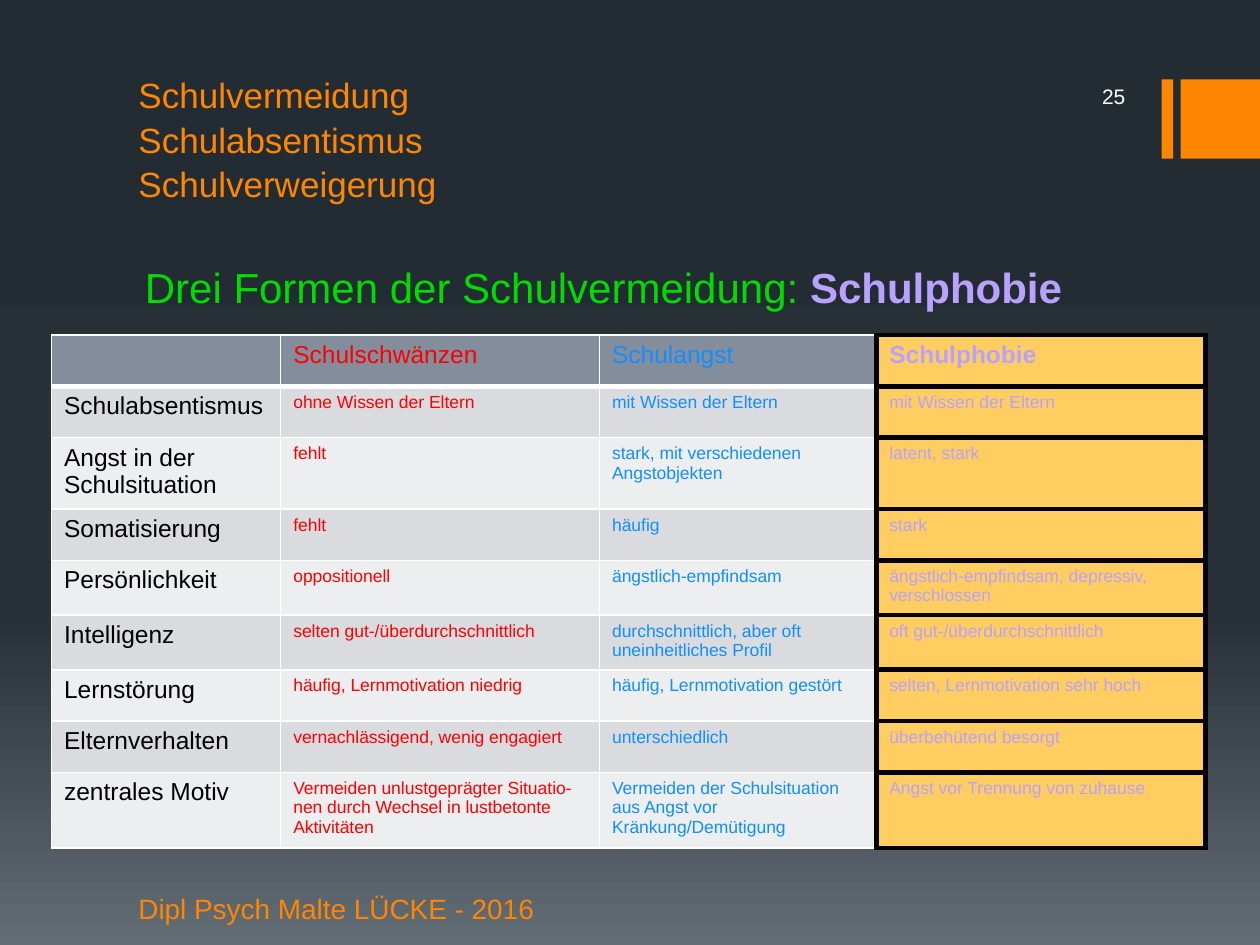
from copy import deepcopy

from lxml import etree
from pptx import Presentation
from pptx.dml.color import RGBColor
from pptx.enum.shapes import MSO_SHAPE
from pptx.enum.text import MSO_ANCHOR, PP_ALIGN
from pptx.oxml.ns import qn
from pptx.util import Pt

RECTANGLE = MSO_SHAPE.RECTANGLE
TOP, MIDDLE, BOTTOM = MSO_ANCHOR.TOP, MSO_ANCHOR.MIDDLE, MSO_ANCHOR.BOTTOM
LEFT, RIGHT = PP_ALIGN.LEFT, PP_ALIGN.RIGHT

FONT = "Arial"
COLORS = {
    "orange": "FF8600", "green": "00DC00", "violet": "B9A1FF",
    "red": "FF0000", "blue": "118EFF", "black": "000000", "white": "FFFFFF",
    "header": "838D9B", "band dark": "D9DBDE", "band light": "EDEEEF",
    "highlight": "FFCD60",
    "sky top": "242C33", "sky middle": "273037", "sky bottom": "636D76",
}
BACKGROUND = [(0, "sky top"), (0.65, "sky middle"), (1, "sky bottom")]
ACCENT_BARS = [(663.84, 6.48), (674.64, 45.36)]  # left, width
BAR_TOP, BAR_HEIGHT = 45.36, 45.36

# Each span is text, size, colour, bold.
TEXTS = [
    {"at": (72, 43.2, 353.52, 77.04), "anchor": BOTTOM,
     "paragraph": {"line_spacing": 1.05},
     "spans": [("Schulvermeidung\nSchulabsentismus\nSchulverweigerung",
                20, "orange", False)]},
    {"at": (72, 146.16, 592.56, 40), "frame": {"margin_left": Pt(10.8)},
     "paragraph": {"space_before": Pt(2.4)},
     "spans": [("Drei Formen der Schulvermeidung: ", 24, "green", False),
               ("Schulphobie", 24, "violet", True)]},
    {"at": (72, 509.76, 251.28, 23.76), "frame": {"margin_top": 0},
     "spans": [("Dipl Psych Malte LÜCKE - 2016", 16, "orange", False)]},
    {"at": (576, 43.2, 74.16, 23.76), "anchor": MIDDLE,
     "paragraph": {"alignment": RIGHT},
     "spans": [("25", 12, "white", False)]},
]

TABLE_LEFT, TABLE_TOP = 29.4, 191.5
COLUMN_WIDTHS = [131.04, 182.16, 158.4, 187.92]
ROW_HEIGHTS = [29.3, 29.3, 38.9, 29.3, 29.3, 29.3, 29.3, 29.3, 41]
COLUMN_COLORS = ["black", "red", "blue", "violet"]
ROWS = [
    ("", "Schulschwänzen", "Schulangst", "Schulphobie"),
    ("Schulabsentismus", "ohne Wissen der Eltern",
     "mit Wissen der Eltern", "mit Wissen der Eltern"),
    ("Angst in der Schulsituation", "fehlt",
     "stark, mit verschiedenen\nAngstobjekten", "latent, stark"),
    ("Somatisierung", "fehlt", "häufig", "stark"),
    ("Persönlichkeit", "oppositionell", "ängstlich-empfindsam",
     "ängstlich-empfindsam, depressiv, verschlossen"),
    ("Intelligenz", "selten gut-/überdurchschnittlich",
     "durchschnittlich, aber oft\nuneinheitliches Profil",
     "oft gut-/überdurchschnittlich"),
    ("Lernstörung", "häufig, Lernmotivation niedrig",
     "häufig, Lernmotivation gestört", "selten, Lernmotivation sehr hoch"),
    ("Elternverhalten", "vernachlässigend, wenig engagiert",
     "unterschiedlich", "überbehütend besorgt"),
    ("zentrales Motiv",
     "Vermeiden unlustgeprägter Situatio-nen durch Wechsel in lustbetonte Aktivitäten",
     "Vermeiden der Schulsituation aus Angst vor Kränkung/Demütigung",
     "Angst vor Trennung von zuhause"),
]


def rgb(name):
    return RGBColor.from_string(COLORS[name])


def set_all(target, values):
    for name, value in values.items():
        setattr(target, name, value)


def add_span(para, text, size, color, bold):
    for number, line in enumerate(text.split("\n")):
        if number:
            para.add_line_break()
        span = para.add_run()
        span.text = line
        set_all(span.font, {"name": FONT, "size": Pt(size), "bold": bold})
        span.font.color.rgb = rgb(color)


def paint_background(page):
    fill = page.background.fill
    fill.gradient()
    fill.gradient_angle = 270
    stop_list = page.element.find(".//" + qn("a:gsLst"))
    stop_list.append(deepcopy(stop_list[-1]))
    for stop, (position, color) in zip(fill.gradient_stops, BACKGROUND):
        stop.position = position
        stop.color.rgb = rgb(color)


def add_bar(page, left, width):
    bar = page.shapes.add_shape(
        RECTANGLE, Pt(left), Pt(BAR_TOP), Pt(width), Pt(BAR_HEIGHT))
    bar.shadow.inherit = False
    bar.fill.solid()
    bar.fill.fore_color.rgb = rgb("orange")
    bar.line.fill.background()


def add_text(page, item):
    box = page.shapes.add_textbox(*map(Pt, item["at"]))
    frame = box.text_frame
    set_all(frame, {"word_wrap": True,
                    "vertical_anchor": item.get("anchor", TOP),
                    **item.get("frame", {})})
    para = frame.paragraphs[0]
    set_all(para, {"alignment": LEFT, **item.get("paragraph", {})})
    for span in item["spans"]:
        add_span(para, *span)


def set_border(cell, side, color, width):
    """Side is L, R, T or B; call in that order, before the fill is set."""
    properties = cell._tc.get_or_add_tcPr()
    line = etree.SubElement(properties, qn(f"a:ln{side}"), w=str(Pt(width)))
    fill = etree.SubElement(line, qn("a:solidFill"))
    etree.SubElement(fill, qn("a:srgbClr"), val=COLORS[color])


def style_cell(cell, row, column):
    is_header, is_highlight = row == 0, column == 3
    borders = dict.fromkeys("LRTB", ("white", 1))
    if is_highlight:
        borders = dict.fromkeys("LRTB", ("black", 3))
    else:
        if column == 2:
            borders["R"] = ("black", 3)
        if is_header:
            borders["B"] = ("white", 3)
        elif row == 1:
            borders["T"] = ("white", 3)
    for side, (color, width) in borders.items():
        set_border(cell, side, color, width)
    band = "header" if is_header else "band dark" if row % 2 else "band light"
    cell.fill.solid()
    cell.fill.fore_color.rgb = rgb("highlight" if is_highlight else band)


def add_forms_table(page):
    table = page.shapes.add_table(
        len(ROWS), len(COLUMN_WIDTHS), Pt(TABLE_LEFT), Pt(TABLE_TOP),
        Pt(sum(COLUMN_WIDTHS)), Pt(sum(ROW_HEIGHTS))).table
    for column, width in zip(table.columns, COLUMN_WIDTHS):
        column.width = Pt(width)
    for row, height in zip(table.rows, ROW_HEIGHTS):
        row.height = Pt(height)
    for row, texts in enumerate(ROWS):
        for column, text in enumerate(texts):
            cell = table.cell(row, column)
            style_cell(cell, row, column)
            size = 14 if row == 0 or column == 0 else 10
            bold = row == 0 and column == 3
            frame = cell.text_frame
            for number, line in enumerate(text.split("\n") if text else []):
                para = frame.add_paragraph() if number else frame.paragraphs[0]
                add_span(para, line, size, COLUMN_COLORS[column], bold)


def main():
    deck = Presentation()
    deck.slide_width, deck.slide_height = Pt(720), Pt(540)
    page = deck.slides.add_slide(deck.slide_layouts[6])
    paint_background(page)
    for left, width in ACCENT_BARS:
        add_bar(page, left, width)
    for item in TEXTS:
        add_text(page, item)
    add_forms_table(page)
    deck.save("out.pptx")


if __name__ == "__main__":
    main()
